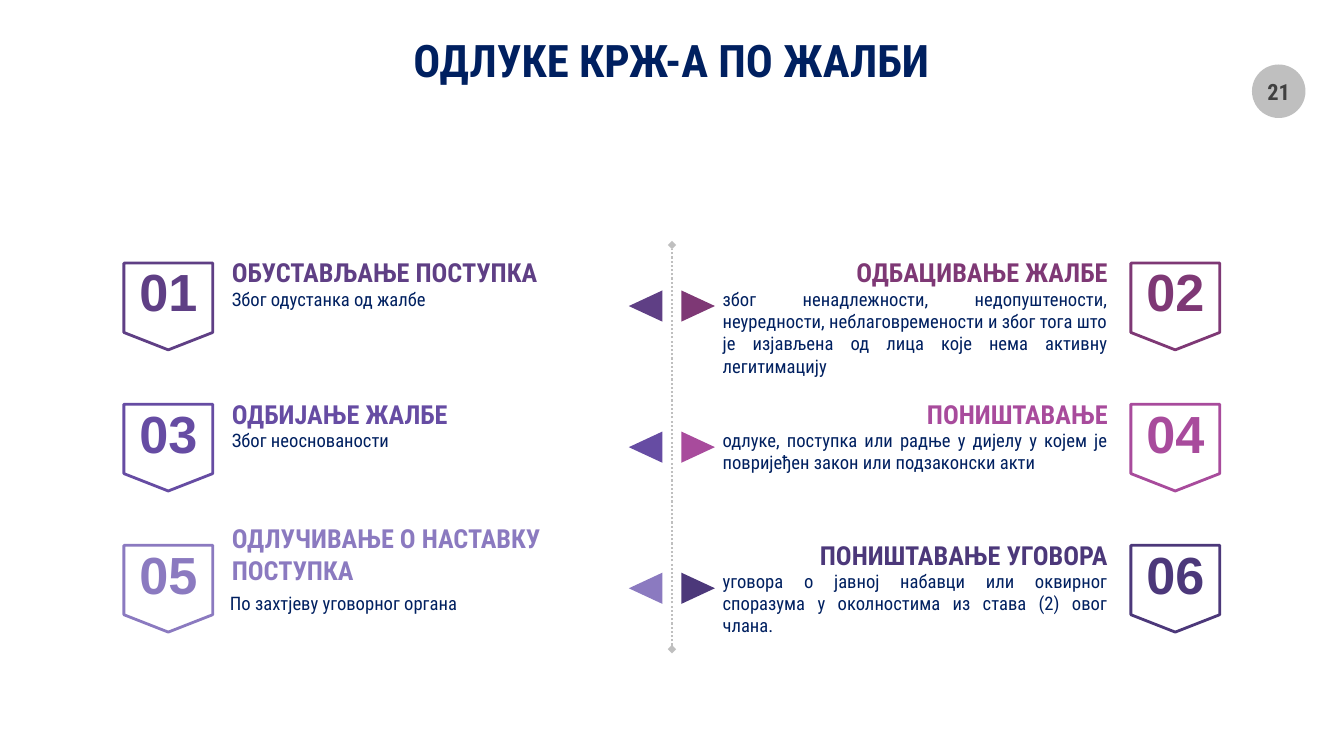
import pptx
import pptx.util
import pptx.dml.color
import pptx.enum.dml
import pptx.enum.shapes
import pptx.enum.text
import pptx.oxml
import pptx.oxml.ns
from pptx.util import Pt

SHAPES = pptx.enum.shapes.MSO_SHAPE
ALIGN = pptx.enum.text.PP_ALIGN
ANCHOR = pptx.enum.text.MSO_ANCHOR

TEXT_FONT = "Roboto Condensed"
NAVY = "002060"
GREY = "BFBFBF"
ROW_TOP = 187.9
ROW_PITCH = 100.8

# One row each: (number, colour, heading, body) on the left and on the right
ROWS = [
    (("01", "5F3F85", "ОБУСТАВЉАЊЕ ПОСТУПКА", "Због одустанка од жалбе"),
     ("02", "7E3875", "ОДБАЦИВАЊЕ ЖАЛБЕ",
      "због ненадлежности, недопуштености, неуредности, неблаговремености "
      "и због тога што је изјављена од лица које нема активну легитимацију")),
    (("03", "664CA3", "ОДБИЈАЊЕ ЖАЛБЕ", "Због неоснованости"),
     ("04", "A84B9C", "ПОНИШТАВАЊЕ",
      "одлуке, поступка или радње у дијелу у којем је повријеђен закон "
      "или подзаконски акти")),
    (("05", "8B7AC0", "ОДЛУЧИВАЊЕ О НАСТАВКУ ПОСТУПКА", "По захтјеву уговорног органа"),
     ("06", "4C387A", "ПОНИШТАВАЊЕ УГОВОРА",
      "уговора о јавној набавци или оквирног споразума у околностима "
      "из става (2) овог члана.")),
]

# Per side: badge left, text left, text width, arrow left, arrow rotation, alignments
LEFT_SIDE = (88.5, 165.6, 278, 450, 270, ALIGN.LEFT, ALIGN.LEFT)
RIGHT_SIDE = (807.8, 516.2, 275, 487.5, 90, ALIGN.RIGHT, ALIGN.JUSTIFY)


def colour(hex_string):
    return pptx.dml.color.RGBColor.from_string(hex_string)


def write(shape, text, size, hex_string, align, bold=True, font=TEXT_FONT,
          anchor=ANCHOR.MIDDLE, bottom=0):
    frame = shape.text_frame
    frame.word_wrap = True
    frame.vertical_anchor = anchor
    frame.margin_left = frame.margin_right = frame.margin_top = 0
    frame.margin_bottom = Pt(bottom)
    paragraph = frame.paragraphs[0]
    paragraph.text = text
    paragraph.alignment = align
    paragraph.font.name = font
    paragraph.font.size = Pt(size)
    paragraph.font.bold = bold
    paragraph.font.color.rgb = colour(hex_string)


def add_text(slide, left, top, width, height, *content, **style):
    box = slide.shapes.add_textbox(Pt(left), Pt(top), Pt(width), Pt(height))
    write(box, *content, **style)


def add_filled(slide, kind, left, top, width, height, hex_string):
    shape = slide.shapes.add_shape(kind, Pt(left), Pt(top), Pt(width), Pt(height))
    shape.shadow.inherit = False
    shape.fill.solid()
    shape.fill.fore_color.rgb = colour(hex_string)
    shape.line.fill.background()
    return shape


def add_badge(slide, left, top, number, hex_string):
    badge = slide.shapes.add_shape(SHAPES.FLOWCHART_OFFPAGE_CONNECTOR,
                                   Pt(left), Pt(top), Pt(63.4), Pt(62))
    badge.shadow.inherit = False
    badge.fill.background()
    badge.line.color.rgb = colour(hex_string)
    badge.line.width = Pt(2)
    write(badge, number, 37.3, hex_string, ALIGN.CENTER, font="Arial", bottom=9.6)


def add_divider(slide, x, bottom, top):
    divider = slide.shapes.add_connector(pptx.enum.shapes.MSO_CONNECTOR.STRAIGHT,
                                         Pt(x), Pt(bottom), Pt(x), Pt(top))
    divider.line.color.rgb = colour(GREY)
    divider.line.width = Pt(1.5)
    divider.line.dash_style = pptx.enum.dml.MSO_LINE.ROUND_DOT
    properties = divider._element.spPr
    line = properties.find(pptx.oxml.ns.qn("a:ln"))
    namespace = pptx.oxml.ns.nsdecls("a")
    for end in ("headEnd", "tailEnd"):
        line.append(pptx.oxml.parse_xml(f'<a:{end} {namespace} type="diamond"/>'))
    properties.append(pptx.oxml.parse_xml(f"<a:effectLst {namespace}/>"))


def add_decision(slide, side, top, decision):
    badge_left, text_left, text_width, arrow_left, rotation, heading_align, body_align = side
    number, hex_string, heading, body = decision
    add_badge(slide, badge_left, top, number, hex_string)

    # A two-line heading grows up and pushes its body text down
    two_lines = len(heading) > 25
    heading_top, heading_height = (top - 16.5, 45.4) if two_lines else (top - 4.5, 22.4)
    body_top = top + (33.2 if two_lines else 17.4)
    add_text(slide, text_left, heading_top, text_width, heading_height,
             heading, 18.7, hex_string, heading_align)
    add_text(slide, text_left - (1.4 if two_lines else 0), body_top, text_width, 16,
             body, 13.3, NAVY, body_align, bold=False, anchor=ANCHOR.TOP)

    arrow = add_filled(slide, SHAPES.ISOSCELES_TRIANGLE, arrow_left, top + 18.7,
                       22.3, 24, hex_string)
    arrow.rotation = rotation


def main():
    presentation = pptx.Presentation()
    presentation.slide_width = Pt(960)
    presentation.slide_height = Pt(540)
    slide = presentation.slides.add_slide(presentation.slide_layouts[6])

    # Page number and title
    page_circle = add_filled(slide, SHAPES.OVAL, 894.3, 46.1, 38.2, 38.2, GREY)
    write(page_circle, "21", 16, "404040", ALIGN.CENTER)
    add_text(slide, 229.7, 20.9, 500, 44, "ОДЛУКЕ КРЖ-А ПО ЖАЛБИ", 32, NAVY, ALIGN.CENTER)

    # Decisions on both sides of the dotted line
    add_divider(slide, 480, 463.7, 175)
    for index, (left_decision, right_decision) in enumerate(ROWS):
        top = ROW_TOP + index * ROW_PITCH
        add_decision(slide, LEFT_SIDE, top, left_decision)
        add_decision(slide, RIGHT_SIDE, top, right_decision)

    presentation.save("out.pptx")


if __name__ == "__main__":
    main()
